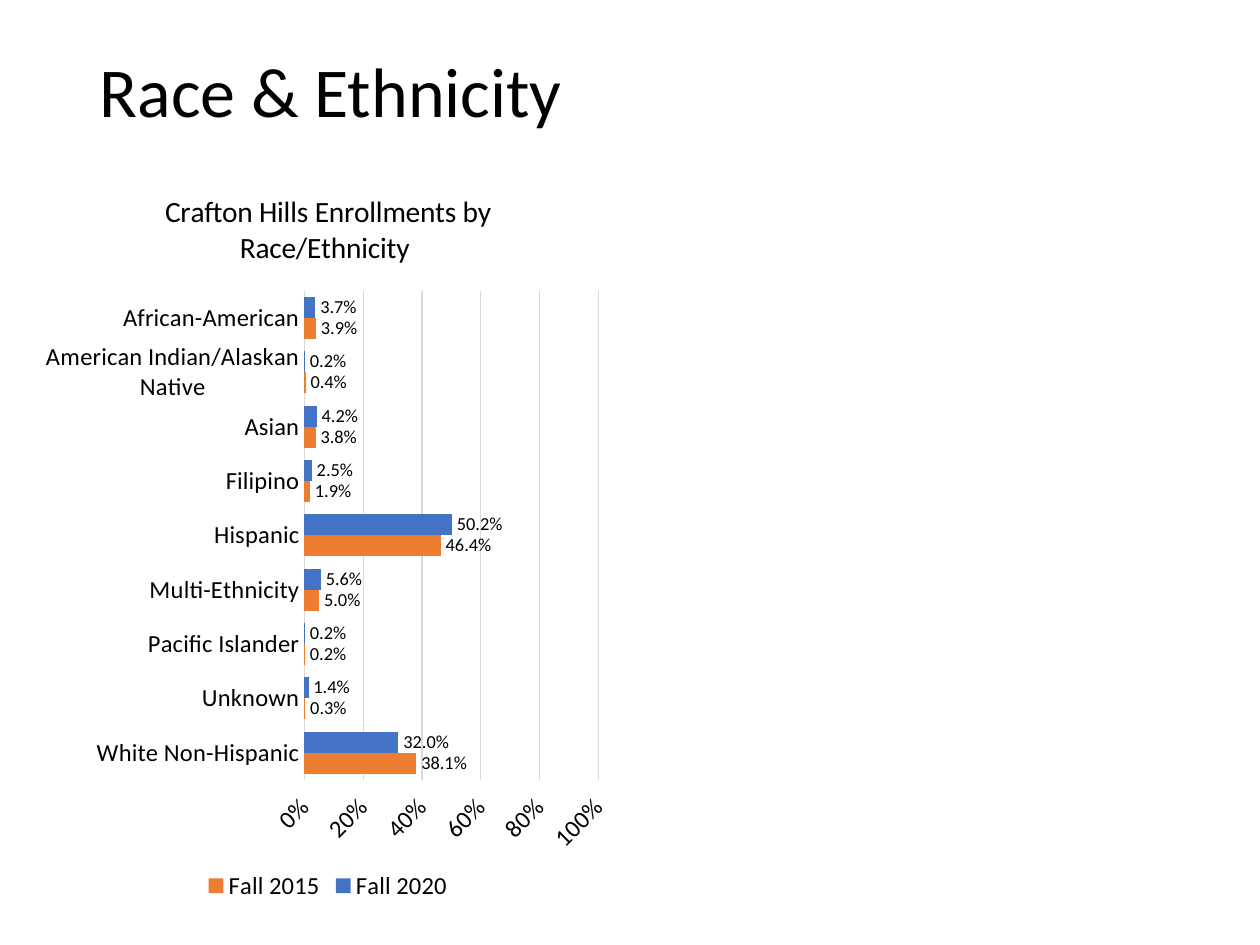
from dataclasses import dataclass

from lxml.etree import SubElement
from pptx import Presentation
from pptx.chart.data import CategoryChartData as Data
from pptx.dml.color import RGBColor as Color
from pptx.enum.chart import (XL_CHART_TYPE as Kind,
                             XL_LABEL_POSITION as Spot,
                             XL_LEGEND_POSITION as Side, XL_TICK_MARK as Tick,
                             XL_TICK_LABEL_POSITION as Place)
from pptx.enum.text import MSO_ANCHOR as Anchor, PP_ALIGN as Align
from pptx.oxml import parse_xml
from pptx.oxml.ns import nsdecls, qn
from pptx.util import Emu, Pt

SCALE = 914400 / 126


@dataclass(frozen=True)
class Theme:
    face: str = "Calibri"
    ink: str = "000000"
    grid: str = "D9D9D9"
    bars: tuple = ("4472C4", "ED7D31")
    head: float = 40
    title: float = 16.8
    text: float = 14
    label: float = 10.5
    line: float = 0.75


THEME = Theme()

GROUPS = ("African-American", "American Indian/Alaskan Native", "Asian",
          "Filipino", "Hispanic", "Multi-Ethnicity", "Pacific Islander",
          "Unknown", "White Non-Hispanic")
SHARES = {
    "Fall 2020": (0.037, 0.002, 0.042, 0.025, 0.502, 0.056, 0.002, 0.014, 0.32),
    "Fall 2015": (0.039, 0.004, 0.038, 0.019, 0.464, 0.05, 0.002, 0.003, 0.381),
}


def px(*vals):
    return [Emu(round(v * SCALE)) for v in vals]


def style(font, size=THEME.text):
    font.name = THEME.face
    font.size = Pt(size)
    font.bold = False
    font.color.rgb = Color.from_string(THEME.ink)


def write(frame, text, size=THEME.text, align=Align.LEFT, gap=1.0):
    para = frame.paragraphs[0]
    para.alignment = align
    para.line_spacing = gap
    run = para.add_run()
    run.text = text
    style(run.font, size)


def rule(line):
    line.color.rgb = Color.from_string(THEME.grid)
    line.width = Pt(THEME.line)


def add_head(slide, text):
    head = slide.shapes.title
    head.left, head.top, head.width, head.height = px(87, 50, 1086, 90)
    head.text_frame.vertical_anchor = Anchor.MIDDLE
    write(head.text_frame, text, size=THEME.head, gap=0.9)


def set_plot(chart, x, y, w, h):
    """Fix the inner plot area, in fractions of the chart."""
    area = chart._chartSpace.chart.plotArea
    for old in area.findall(qn("c:layout")):
        area.remove(old)
    layout = parse_xml(f"<c:layout {nsdecls('c')}/>")
    manual = SubElement(layout, qn("c:manualLayout"))
    parts = dict(layoutTarget="inner", xMode="edge", yMode="edge",
                 x=x, y=y, w=w, h=h)
    for name, val in parts.items():
        SubElement(manual, qn(f"c:{name}")).set("val", str(val))
    area.insert(0, layout)


def set_axes(chart):
    """Run groups top down, with the value labels at the far (lower) end."""
    cat, val = chart.category_axis, chart.value_axis
    for axis in (cat, val):
        axis.major_tick_mark = axis.minor_tick_mark = Tick.NONE
        style(axis.tick_labels.font)
    cat.reverse_order = True
    rule(cat.format.line)
    val.minimum_scale, val.maximum_scale, val.major_unit = 0, 1, 0.2
    val.tick_label_position = Place.HIGH
    val.tick_labels.number_format = "0%"
    val.tick_labels.number_format_is_linked = False
    val.format.line.fill.background()
    rule(val.major_gridlines.format.line)
    body = val._element.find(qn("c:txPr")).find(qn("a:bodyPr"))
    body.set("rot", str(-45 * 60000))


def set_bars(plot):
    plot.gap_width, plot.overlap = 60, 0
    plot.vary_by_categories = False
    for bar, tint in zip(plot.series, THEME.bars):
        bar.format.fill.solid()
        bar.format.fill.fore_color.rgb = Color.from_string(tint)
        bar.invert_if_negative = False
        tags = bar.data_labels
        tags.show_value = True
        tags.number_format = "0.0%"
        tags.number_format_is_linked = False
        tags.position = Spot.OUTSIDE_END
        style(tags.font, THEME.label)


def add_bars(slide, title, groups, shares):
    data = Data(number_format="0.0%")
    data.categories = groups
    for name, vals in shares.items():
        data.add_series(name, vals)
    chart = slide.shapes.add_chart(Kind.BAR_CLUSTERED,
                                   *px(34, 165, 588, 741), data).chart
    style(chart.font)
    chart.has_title = True
    write(chart.chart_title.text_frame, title, size=THEME.title,
          align=Align.CENTER)
    chart.chart_title.include_in_layout = False
    chart.has_legend = True
    chart.legend.position = Side.BOTTOM
    chart.legend.include_in_layout = False
    style(chart.legend.font)
    set_axes(chart)
    set_bars(chart.plots[0])
    set_plot(chart, 0.46, 0.17, 0.5, 0.66)


def main():
    deck = Presentation()
    deck.slide_width, deck.slide_height = px(1260, 945)
    slide = deck.slides.add_slide(deck.slide_layouts[5])
    add_head(slide, "Race & Ethnicity")
    add_bars(slide, "Crafton Hills Enrollments by Race/Ethnicity ",
             GROUPS, SHARES)
    deck.save("out.pptx")


if __name__ == "__main__":
    main()
